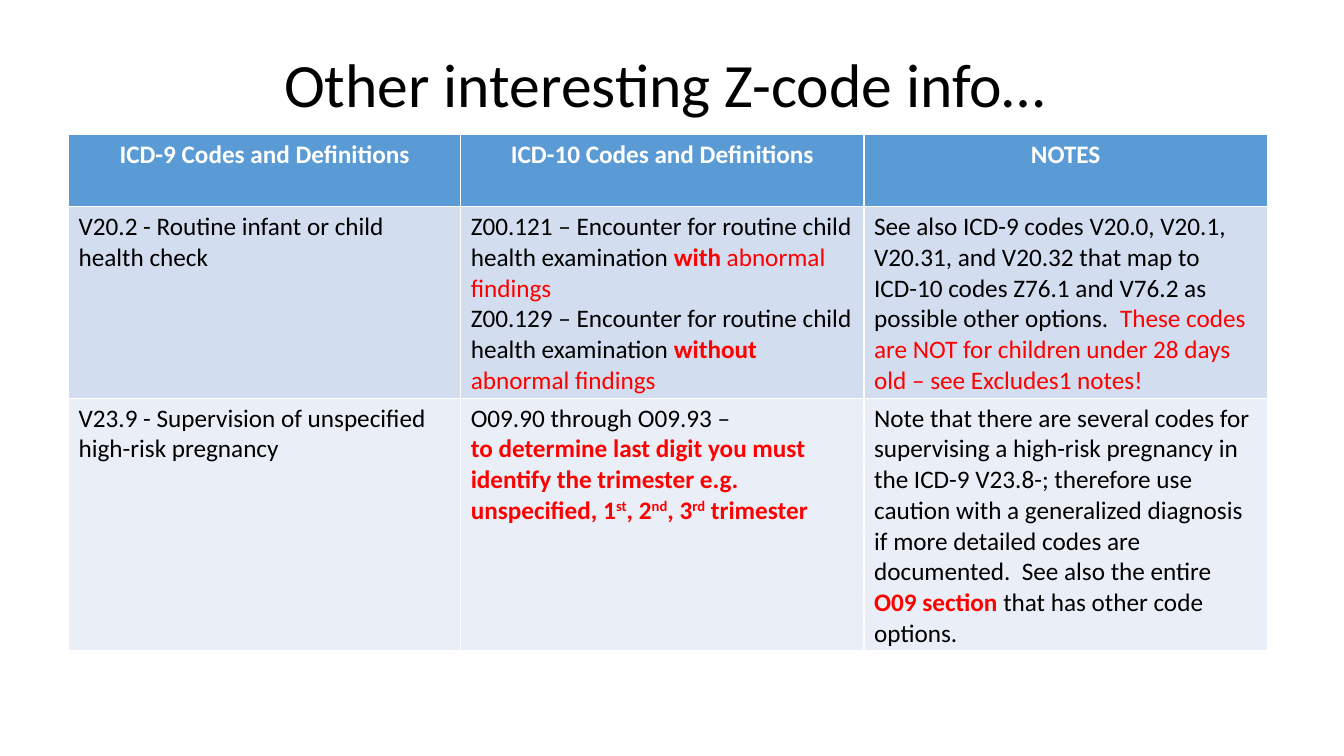
from pptx import Presentation
from pptx.dml.color import RGBColor
from pptx.enum.text import MSO_ANCHOR, PP_ALIGN
from pptx.util import Inches, Pt

CENTER = PP_ALIGN.CENTER
MIDDLE = MSO_ANCHOR.MIDDLE
FONT = "Calibri"
COLORS = {
    "black": "000000",
    "white": "FFFFFF",
    "red": "FF0000",
    "header": "5B9BD5",
    "band_dark": "D2DEEF",
    "band_light": "EAEFF7",
}


def add_run(paragraph, text, size=18, color="black", bold=False, superscript=False):
    run = paragraph.add_run()
    run.text = text
    run.font.name = FONT
    run.font.size = Pt(size)
    run.font.bold = bold
    run.font.color.rgb = RGBColor.from_string(COLORS[color])
    if superscript:
        run.font._element.set("baseline", "30000")


presentation = Presentation()
presentation.slide_width = Inches(13.33)
presentation.slide_height = Inches(7.5)
slide = presentation.slides.add_slide(presentation.slide_layouts[6])

# Title
title = slide.shapes.add_textbox(Inches(2.72), Inches(0.4), Inches(9.7), Inches(0.93))
title.text_frame.word_wrap = True
title.text_frame.vertical_anchor = MIDDLE
title_paragraph = title.text_frame.paragraphs[0]
title_paragraph.line_spacing = 0.9
add_run(title_paragraph, "Other interesting Z-code info…", size=44)

# Table content: rows of cells, cells of paragraphs, paragraphs of (text, format) runs
PLAIN = {}
HEADING = {"color": "white", "bold": True}
RED = {"color": "red"}
STRONG = {"color": "red", "bold": True}
ORDINAL = {"color": "red", "bold": True, "superscript": True}

headings = ["ICD-9 Codes and Definitions", "ICD-10 Codes and Definitions", "NOTES"]
rows = [
    [[[(heading, HEADING)]] for heading in headings],
    [
        [[("V20.2 - Routine infant or child health check", PLAIN)]],
        [
            [
                (f"{code} – Encounter for routine child health examination ", PLAIN),
                (finding, STRONG),
                (" abnormal findings", RED),
            ]
            for code, finding in [("Z00.121", "with"), ("Z00.129", "without")]
        ],
        [[
            ("See also ICD-9 codes V20.0, V20.1, V20.31, and V20.32 that map to "
             "ICD-10 codes Z76.1 and V76.2 as possible other options.  ", PLAIN),
            ("These codes are NOT for children under 28 days old – "
             "see Excludes1 notes!", RED),
        ]],
    ],
    [
        [[("V23.9 - Supervision of unspecified high-risk pregnancy", PLAIN)]],
        [
            [("O09.90 through O09.93 –", PLAIN)],
            [
                ("to determine last digit you must identify the trimester e.g. "
                 "unspecified, 1", STRONG),
                ("st", ORDINAL),
                (", 2", STRONG),
                ("nd", ORDINAL),
                (", 3", STRONG),
                ("rd", ORDINAL),
                (" trimester", STRONG),
            ],
        ],
        [[
            ("Note that there are several codes for supervising a high-risk pregnancy "
             "in the ICD-9 V23.8-; therefore use caution with a generalized diagnosis "
             "if more detailed codes are documented.  See also the entire ", PLAIN),
            ("O09 section ", STRONG),
            ("that has other code options.", PLAIN),
        ]],
    ],
]

# Table: the default style supplies the white cell borders
column_widths = [3.89, 4, 4]
row_heights = [0.72, 1.9, 2.5]
row_fills = ["header", "band_dark", "band_light"]
table = slide.shapes.add_table(
    len(rows), len(column_widths), Inches(0.68), Inches(1.33),
    Inches(sum(column_widths)), Inches(sum(row_heights)),
).table
for column, width in zip(table.columns, column_widths):
    column.width = Inches(width)

for row_index, cells in enumerate(rows):
    table.rows[row_index].height = Inches(row_heights[row_index])
    for column_index, paragraphs in enumerate(cells):
        cell = table.cell(row_index, column_index)
        cell.fill.solid()
        cell.fill.fore_color.rgb = RGBColor.from_string(COLORS[row_fills[row_index]])
        for paragraph_index, runs in enumerate(paragraphs):
            if paragraph_index == 0:
                paragraph = cell.text_frame.paragraphs[0]
            else:
                paragraph = cell.text_frame.add_paragraph()
            if row_index == 0:
                paragraph.alignment = CENTER
            for text, run_format in runs:
                add_run(paragraph, text, **run_format)

presentation.save("out.pptx")
